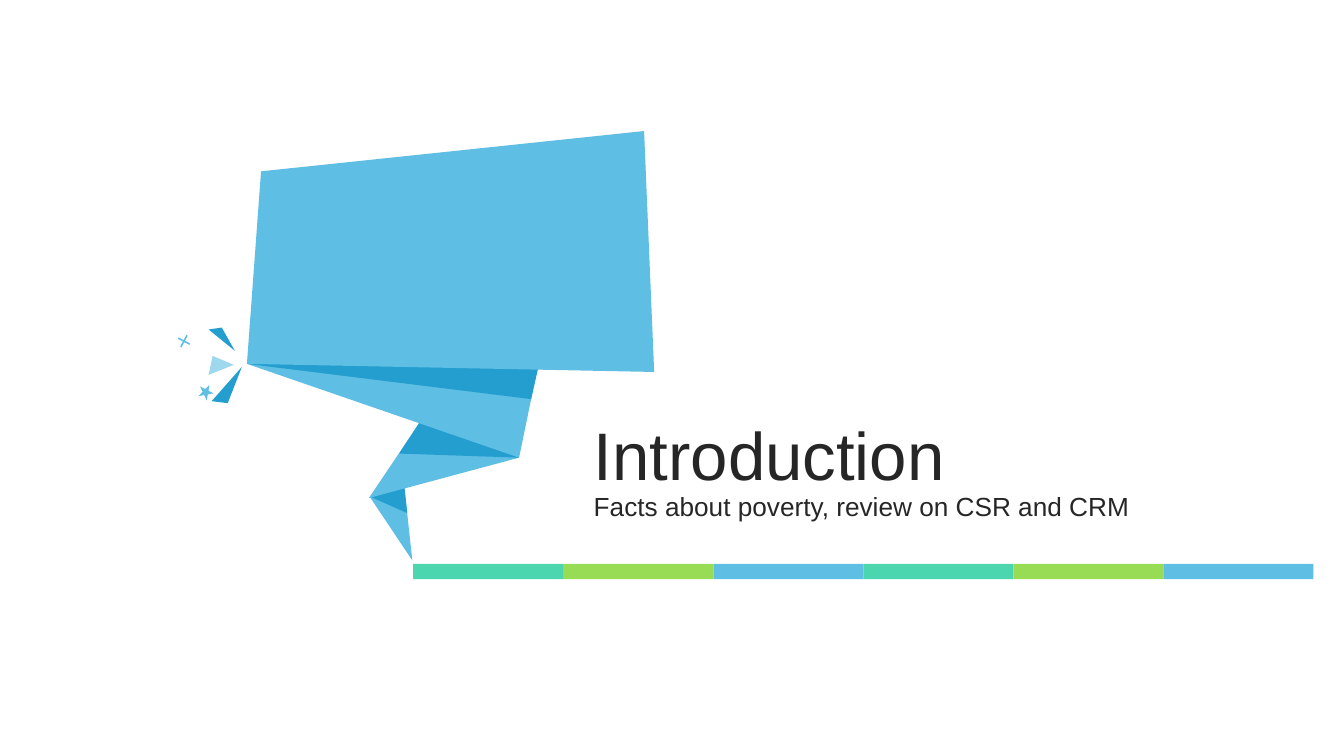
import pptx
import pptx.dml.color
import pptx.enum.shapes
import pptx.enum.text
import pptx.util

Pt = pptx.util.Pt
RGBColor = pptx.dml.color.RGBColor
SHAPES = pptx.enum.shapes.MSO_SHAPE

INK = RGBColor(0x26, 0x26, 0x26)
SKY = RGBColor(0x5E, 0xBE, 0xE4)
DEEP_BLUE = RGBColor(0x23, 0x9E, 0xCF)
PALE_BLUE = RGBColor(0x9E, 0xD8, 0xEF)
TEAL = RGBColor(0x4C, 0xD6, 0xB0)
LIME = RGBColor(0x98, 0xDC, 0x56)

RIBBON_FOLDS = [
    (SKY, [(264.2, 355), (294.5, 400.3), (286.6, 326.9)]),
    (DEEP_BLUE, [(265, 355), (290.9, 366.5), (286.6, 326.9)]),
    (SKY, [(370.8, 326.9), (263.5, 355.7), (311, 285.1)]),
    (DEEP_BLUE, [(370.8, 326.9), (285.1, 324), (308.2, 288.7)]),
    (SKY, [(176.4, 259.9), (370.8, 326.9), (389.5, 236.2)]),
    (DEEP_BLUE, [(176.4, 259.9), (379.4, 285.1), (387.4, 249.8)]),
    (SKY, [(186.5, 122.4), (460.1, 93.6), (467.3, 265.7), (176.4, 259.9)]),
]
SPARKS = [
    (PALE_BLUE, [(149, 267.8), (167, 260.6), (151.9, 254.2)]),
    (DEEP_BLUE, [(172.8, 262.1), (151.2, 286.6), (162.7, 288)]),
    (DEEP_BLUE, [(167.8, 250.6), (149, 235.4), (158.4, 234)]),
]
BAR_COLORS = [TEAL, LIME, SKY] * 2
BAR_LEFT, BAR_TOP, BAR_WIDTH, BAR_HEIGHT = 295.2, 402.8, 107.16, 11


def paint(shape, color):
    shape.shadow.inherit = False
    shape.fill.solid()
    shape.fill.fore_color.rgb = color
    shape.line.fill.background()


def add_facet(slide, color, corners):
    start, *others = [(Pt(x), Pt(y)) for x, y in corners]
    outline = slide.shapes.build_freeform(*start)
    outline.add_line_segments(others, close=True)
    paint(outline.convert_to_shape(), color)


def add_preset(slide, kind, color, left, top, width, height, rotation=0):
    preset = slide.shapes.add_shape(kind, Pt(left), Pt(top), Pt(width), Pt(height))
    preset.rotation = rotation
    paint(preset, color)
    return preset


def set_heading(placeholder, text, size, top, height):
    placeholder.left, placeholder.top = Pt(416.9), Pt(top)
    placeholder.width, placeholder.height = Pt(455), Pt(height)
    frame = placeholder.text_frame
    frame.text = text
    frame.word_wrap = True
    frame.auto_size = pptx.enum.text.MSO_AUTO_SIZE.NONE
    frame.vertical_anchor = pptx.enum.text.MSO_ANCHOR.MIDDLE
    paragraph = frame.paragraphs[0]
    paragraph.alignment = pptx.enum.text.PP_ALIGN.LEFT
    paragraph.space_before = Pt(0)
    paragraph.font.name = "Arial"
    paragraph.font.size = Pt(size)
    paragraph.font.color.rgb = INK


def main():
    deck = pptx.Presentation()
    deck.slide_width, deck.slide_height = Pt(960), Pt(540)
    slide = deck.slides.add_slide(deck.slide_layouts[0])

    title, subtitle = slide.placeholders
    set_heading(title, "Introduction", 48, 291.6, 65.5)
    set_heading(subtitle, "Facts about poverty, review on CSR and CRM", 18.7, 346.3, 30.2)

    for color, corners in RIBBON_FOLDS + SPARKS:
        add_facet(slide, color, corners)
    plus = add_preset(slide, SHAPES.CROSS, SKY, 126.7, 239, 9.4, 9.4, 27.4)
    plus.adjustments[0] = 0.44
    add_preset(slide, SHAPES.STAR_5_POINT, SKY, 141.8, 274.3, 10.8, 10.8, 27.1)

    for index, color in enumerate(BAR_COLORS):
        left = BAR_LEFT + index * BAR_WIDTH
        add_preset(slide, SHAPES.RECTANGLE, color, left, BAR_TOP, BAR_WIDTH, BAR_HEIGHT)

    deck.save("out.pptx")


if __name__ == "__main__":
    main()
